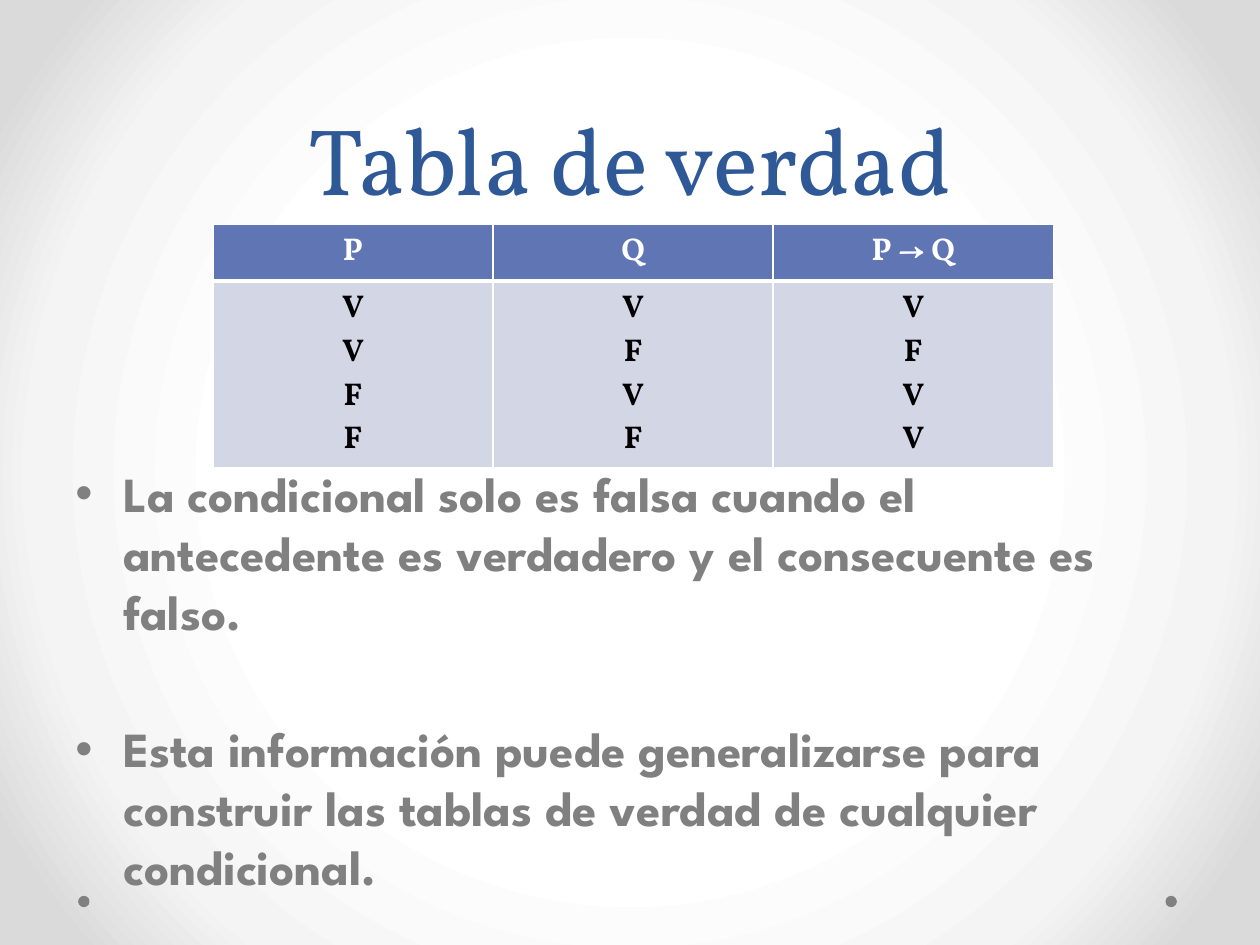
from dataclasses import dataclass

from lxml.etree import SubElement
from pptx import Presentation
from pptx.dml.color import RGBColor as RGB
from pptx.enum.shapes import MSO_SHAPE as Shape
from pptx.enum.text import MSO_ANCHOR as Anchor, PP_ALIGN as Align
from pptx.oxml.ns import qn
from pptx.util import Inches, Pt


@dataclass(frozen=True)
class Theme:
    serif: str = "Vollkorn"
    sans: str = "League Spartan"
    title: str = "2F5897"
    gray: str = "808080"
    header: str = "6076B4"
    band: str = "D2D6E5"
    white: str = "FFFFFF"
    black: str = "000000"
    title_size: int = 54
    body_size: int = 28
    cell_size: int = 18
    background: tuple = ((50, "FFFFFF"), (76, "F4F4F4"), (92, "DADADA"))


@dataclass(frozen=True)
class Column:
    heading: str
    values: str


T = Theme()
COLUMNS = (Column("P", "VVFF"), Column("Q", "VFVF"), Column("P → Q", "VFVV"))
TABLE_WIDTH = 6.67
ROW_HEIGHTS = (0.45, 1.48)
BULLETS = (
    "La condicional solo es falsa cuando el antecedente es verdadero "
    "y el consecuente es falso.",
    "Esta información puede generalizarse para construir las tablas "
    "de verdad de cualquier condicional.",
)


def add_run(p, text: str, font: str, size: int, color: str, bold: bool = False) -> None:
    r = p.add_run()
    r.text = text
    r.font.name, r.font.size, r.font.bold = font, Pt(size), bold
    r.font.color.rgb = RGB.from_string(color)


def add_color(parent, color: str) -> None:
    SubElement(parent, qn("a:srgbClr"), val=color)


def add_text_box(s, left: float, top: float, width: float, height: float):
    tf = s.shapes.add_textbox(
        Inches(left), Inches(top), Inches(width), Inches(height)).text_frame
    tf.word_wrap = True
    return tf


def set_background(s) -> None:
    fill = s.background.fill
    fill.gradient()
    grad = s.background._cSld.bg.bgPr.find(qn("a:gradFill"))
    for child in list(grad):
        grad.remove(child)
    stops = SubElement(grad, qn("a:gsLst"))
    for pos, color in T.background:
        add_color(SubElement(stops, qn("a:gs"), pos=str(pos * 1000)), color)
    center = SubElement(grad, qn("a:path"), {"path": "circle"})
    SubElement(center, qn("a:fillToRect"), {side: "50000" for side in "ltrb"})


def add_dot(s, left: float) -> None:
    sp = s.shapes.add_shape(
        Shape.OVAL, Inches(left), Inches(7.11), Inches(0.09), Inches(0.09))
    sp.shadow.inherit = False
    sp.fill.solid()
    sp.fill.fore_color.rgb = RGB.from_string(T.gray)
    sp.line.fill.background()


def add_bullet(p, text: str) -> None:
    pPr = p._p.get_or_add_pPr()
    pPr.set("marL", str(Inches(0.38)))
    pPr.set("indent", str(-Inches(0.38)))
    SubElement(pPr, qn("a:buFont"), typeface="Arial")
    SubElement(pPr, qn("a:buChar"), char="•")
    add_run(p, text, T.sans, T.body_size, T.gray, bold=True)


def fill_cell(cell, lines, fill: str, color: str, bottom: int) -> None:
    tf = cell.text_frame
    for i, line in enumerate(lines):
        p = tf.add_paragraph() if i else tf.paragraphs[0]
        p.alignment = Align.CENTER
        add_run(p, line, T.serif, T.cell_size, color, bold=True)
    # Borders come before the fill in the cell properties
    tcPr = cell._tc.get_or_add_tcPr()
    for side, width in (("L", 1), ("R", 1), ("T", 1), ("B", bottom)):
        ln = SubElement(tcPr, qn(f"a:ln{side}"), w=str(Pt(width)))
        add_color(SubElement(ln, qn("a:solidFill")), T.white)
    cell.fill.solid()
    cell.fill.fore_color.rgb = RGB.from_string(fill)


def add_truth_table(s) -> None:
    table = s.shapes.add_table(
        len(ROW_HEIGHTS), len(COLUMNS), Inches(1.69), Inches(1.78),
        Inches(TABLE_WIDTH), Inches(sum(ROW_HEIGHTS))).table
    for row, height in zip(table.rows, ROW_HEIGHTS):
        row.height = Inches(height)
    for i, column in enumerate(COLUMNS):
        table.columns[i].width = Inches(TABLE_WIDTH / len(COLUMNS))
        fill_cell(table.cell(0, i), [column.heading], T.header, T.white, bottom=3)
        fill_cell(table.cell(1, i), column.values, T.band, T.black, bottom=1)


def main() -> None:
    prs = Presentation()
    prs.slide_width, prs.slide_height = Inches(10), Inches(7.5)
    s = prs.slides.add_slide(prs.slide_layouts[6])

    # Background and corner dots
    set_background(s)
    for left in (9.25, 0.62):
        add_dot(s, left)

    # Title
    tf = add_text_box(s, 0.5, 0, 9, 1.75)
    tf.vertical_anchor = Anchor.BOTTOM
    p = tf.paragraphs[0]
    p.alignment, p.line_spacing = Align.CENTER, Pt(58)
    add_run(p, "Tabla de verdad", T.serif, T.title_size, T.title)

    # Conclusions below the table
    tf = add_text_box(s, 0.5, 3.63, 9, 3.43)
    for i, text in enumerate(BULLETS):
        p = tf.add_paragraph() if i else tf.paragraphs[0]
        p.space_before = Pt(45 if i else 0)
        add_bullet(p, text)

    # Truth table
    add_truth_table(s)

    prs.save("out.pptx")


if __name__ == "__main__":
    main()
